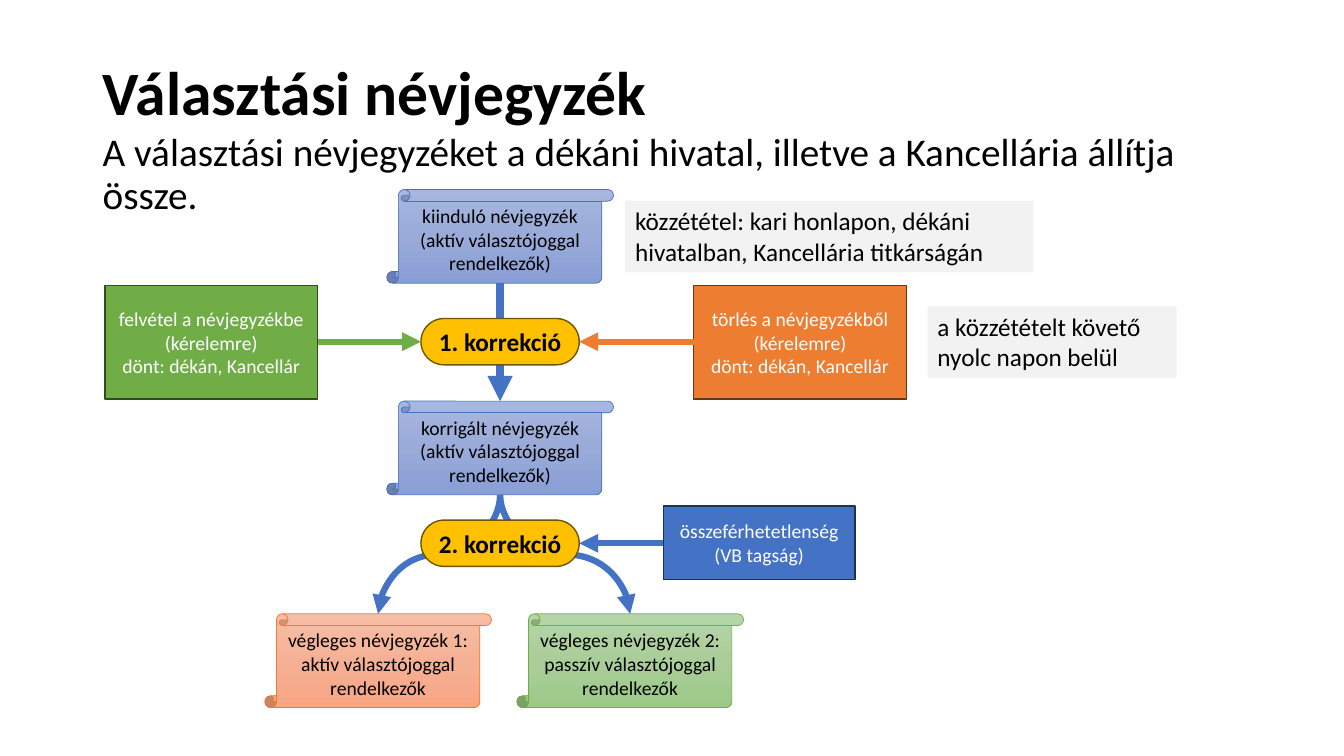
from copy import deepcopy

from pptx import Presentation
from pptx.dml.color import RGBColor
from pptx.enum.shapes import MSO_CONNECTOR as Wire, MSO_SHAPE as Form
from pptx.enum.text import MSO_ANCHOR as Anchor, MSO_AUTO_SIZE as Fit, PP_ALIGN as Align
from pptx.oxml.ns import qn
from pptx.oxml.xmlchemy import OxmlElement
from pptx.util import Emu, Pt

SCALE = 9144  # EMU in one px, 100 px to the inch
BLUE, GREEN, ORANGE, GOLD = "4472C4", "70AD47", "ED7D31", "FFC000"
BLACK, WHITE, GRAY = "000000", "FFFFFF", "F2F2F2"
FADES = {
    BLUE: ("A8B7DF", "9AABD9", "889ED7"),
    ORANGE: ("F7BDA5", "F5B196", "F8A582"),
    GREEN: ("B5D5A7", "AACE9A", "9CC987"),
}
EDGES = {GOLD: "705400", GREEN: "314C1F", ORANGE: "683715", BLUE: "1E3256"}
MID = 496  # axis of the main flow
SCROLL_W, SCROLL_H = 225, 93
PILL_W, PILL_H = 157, 46


def px(*vals):
    return [Emu(round(v * SCALE)) for v in vals]


def rgb(code):
    return RGBColor.from_string(code)


def write(shape, text, size, color=BLACK, bold=False, align=Align.CENTER,
          anchor=Anchor.MIDDLE, **para):
    frame = shape.text_frame
    frame.word_wrap = True
    frame.vertical_anchor = anchor
    frame.text = text
    for item in frame.paragraphs:
        for key, val in dict(para, alignment=align).items():
            setattr(item, key, val)
        for run in item.runs:
            font = {"name": "Calibri", "size": Pt(size), "bold": bold}
            for key, val in font.items():
                setattr(run.font, key, val)
            run.font.color.rgb = rgb(color)


def block(slide, form, box, fill=None, edge=None, width=1):
    shape = slide.shapes.add_shape(form, *px(*box))
    shape.shadow.inherit = False
    if fill:
        shape.fill.solid()
        shape.fill.fore_color.rgb = rgb(fill)
    if edge:
        shape.line.color.rgb = rgb(edge)
        shape.line.width = Pt(width)
    else:
        shape.line.fill.background()
    return shape


def heading(slide, box, text, size, **style):
    area = slide.shapes.add_textbox(*px(*box))
    write(area, text, size, align=Align.LEFT, line_spacing=0.9, **style)


def scroll(slide, mid, top, hue, text):
    """Paper roll centred on mid, with a three-step fade."""
    box = (mid - SCROLL_W / 2, top, SCROLL_W, SCROLL_H)
    shape = block(slide, Form.VERTICAL_SCROLL, box, edge=hue, width=0.5)
    shape.fill.gradient()
    shape.fill.gradient_angle = 270
    stops = shape._element.spPr.find(".//" + qn("a:gsLst"))
    stops.insert(1, deepcopy(stops[0]))
    for stop, place, code in zip(shape.fill.gradient_stops, (0, 0.5, 1), FADES[hue]):
        stop.position = place
        stop.color.rgb = rgb(code)
    write(shape, text, 14)


def pill(slide, mid, top, text):
    box = (mid - PILL_W / 2, top, PILL_W, PILL_H)
    shape = block(slide, Form.ROUNDED_RECTANGLE, box, GOLD, EDGES[GOLD])
    shape.adjustments[0] = 0.5
    write(shape, text, 18, bold=True)


def card(slide, box, hue, text):
    write(block(slide, Form.RECTANGLE, box, hue, EDGES[hue]), text, 14, WHITE)


def note(slide, box, text):
    shape = block(slide, Form.RECTANGLE, box, GRAY)
    write(shape, text, 18, align=Align.LEFT, anchor=Anchor.TOP)
    shape.text_frame.auto_size = Fit.SHAPE_TO_FIT_TEXT


def arrow(slide, start, end, hue, width=4.5, kind=Wire.STRAIGHT):
    line = slide.shapes.add_connector(kind, *px(*start, *end))
    line.line.color.rgb = rgb(hue)
    line.line.width = Pt(width)
    tip = OxmlElement("a:tailEnd")
    tip.set("type", "triangle")
    line.line._get_or_add_ln().append(tip)
    line._element.spPr.append(OxmlElement("a:effectLst"))
    return line


def branch(slide, start, end, hue):
    """S-curve that leaves and arrives vertically: a sideways curve, turned."""
    (x1, y1), (x2, y2) = start, end
    cx, cy = (x1 + x2) / 2, (y1 + y2) / 2
    run, rise = (y2 - y1) / 2, abs(x2 - x1) / 2
    side = 1 if x2 < x1 else -1
    line = arrow(slide, (cx - side * run, cy - rise), (cx + side * run, cy + rise),
                 hue, kind=Wire.CURVE)
    turn = 90 if side > 0 else 270
    line._element.spPr.find(qn("a:xfrm")).set("rot", str(turn * 60000))


def first(slide, top):
    """Starting list, first correction and corrected list."""
    low = top + 210
    axis = top + 151
    left, right = MID - PILL_W / 2, MID + PILL_W / 2
    voters = "névjegyzék (aktív választójoggal rendelkezők)"
    scroll(slide, MID, top, BLUE, "kiinduló " + voters)
    scroll(slide, MID, low, BLUE, "korrigált " + voters)
    arrow(slide, (MID, top + SCROLL_H), (MID, low), BLUE, 6)
    pill(slide, MID, axis - PILL_H / 2, "1. korrekció")
    sides = (
        (104, 315, left, GREEN, "felvétel a névjegyzékbe"),
        (688, 688, right, ORANGE, "törlés a névjegyzékből"),
    )
    for x, exit, goal, hue, text in sides:
        card(slide, (x, axis - 56, 211, 113), hue,
             text + " (kérelemre)\ndönt: dékán, Kancellár")
        arrow(slide, (exit, axis), (goal, axis), hue)
    note(slide, (620, top + 11, 405, 71),
         "közzététel: kari honlapon, dékáni hivatalban, Kancellária titkárságán")
    note(slide, (920, top + 116, 247, 71), "a közzétételt követő nyolc napon belül")


def second(slide, top):
    """Second correction and the two final lists."""
    axis, low = top + 48, top + 118
    card(slide, (658, axis - 37, 190, 73), BLUE, "összeférhetetlenség\v(VB tagság)")
    arrow(slide, (658, axis), (MID + PILL_W / 2, axis), BLUE)
    ends = (
        (375, ORANGE, "végleges névjegyzék 1: aktív választójoggal rendelkezők"),
        (625, GREEN, "végleges névjegyzék 2: passzív választójoggal rendelkezők"),
    )
    for mid, hue, text in ends:
        scroll(slide, mid, low, hue, text)
        branch(slide, (MID, top), (mid, low), BLUE)
    pill(slide, MID, axis - PILL_H / 2, "2. korrekció")


def main():
    deck = Presentation()
    deck.slide_width, deck.slide_height = px(1333, 750)
    slide = deck.slides.add_slide(deck.slide_layouts[6])
    heading(slide, (92, 40, 1150, 109), "Választási névjegyzék", 44, bold=True)
    heading(slide, (92, 127, 1150, 103),
            "A választási névjegyzéket a dékáni hivatal, illetve a Kancellária "
            "állítja össze.", 28, anchor=Anchor.TOP, space_before=Pt(10))
    first(slide, 188)
    second(slide, 491)
    deck.save("out.pptx")


if __name__ == "__main__":
    main()
